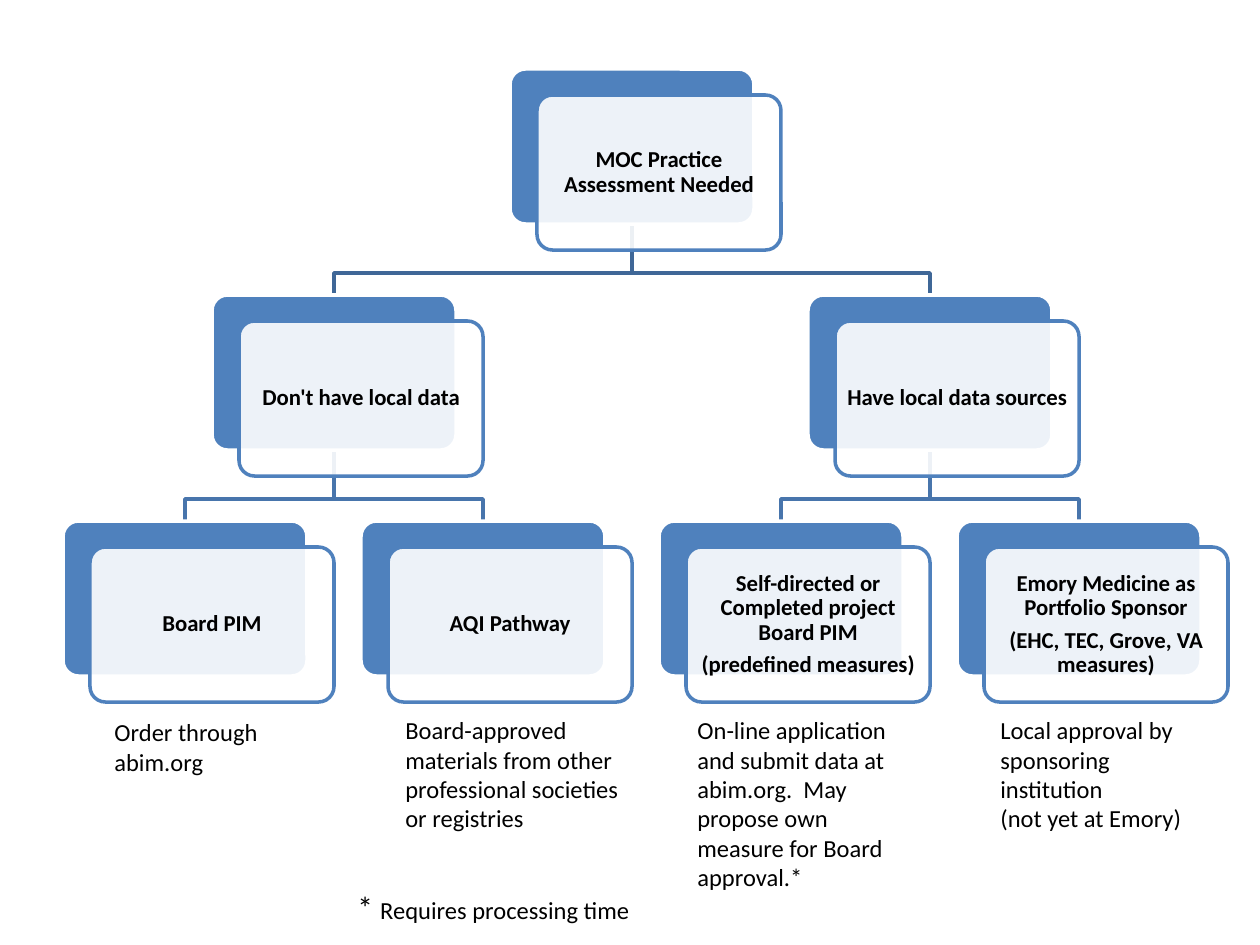
from lxml import etree
from pptx import Presentation, util as u
from pptx.dml.color import RGBColor
from pptx.enum import shapes, text
from pptx.oxml import ns

PX = 914400 / 126
BLUE = RGBColor(0x4F, 0x81, 0xBD)
DARK = RGBColor(0x3F, 0x67, 0x97)
MID = RGBColor(0x48, 0x75, 0xAC)
WHITE = RGBColor(0xFF, 0xFF, 0xFF)
BLACK = RGBColor(0, 0, 0)

WIDE, HIGH = 244, 155
LEFT, TOP = 63, 69
COL, ROW = 298, 226
DX, DY = 27, 26
BEND = 49

NODES = [
    (1.5, 0, ["MOC Practice Assessment Needed"]),
    (0.5, 1, ["Don't have local data"]),
    (0, 2, ["Board PIM"]),
    (1, 2, ["AQI Pathway"]),
    (2.5, 1, ["Have local data sources"]),
    (2, 2, ["Self-directed or Completed project Board PIM",
            "(predefined measures)"]),
    (3, 2, ["Emory Medicine as Portfolio Sponsor",
            "(EHC, TEC, Grove, VA measures)"]),
]
LINKS = [
    (2.5, 1, 3, MID), (2.5, 1, 2, MID), (1.5, 0, 2.5, DARK),
    (0.5, 1, 1, MID), (0.5, 1, 0, MID), (1.5, 0, 0.5, DARK),
]
NOTES = [
    (102, 711, 180, 126, ["Order through", "abim.org"]),
    (393, 709, 241, 154, ["Board-approved", "materials from other",
                          "professional societies", "or registries"]),
    (685, 709, 242, 180, ["On-line application", "and submit data at",
                          "abim.org.  May", "propose own",
                          "measure for Board", "approval.*"]),
    (988, 709, 242, 180, ["Local approval by", "sponsoring institution",
                          "(not yet at Emory)"]),
]

INSET = {"margin_" + side: u.Emu(round(6 * PX))
         for side in ("left", "right", "top", "bottom")}
FRAME = {"word_wrap": True, "vertical_anchor": text.MSO_ANCHOR.MIDDLE, **INSET}
PARA = {"alignment": text.PP_ALIGN.CENTER, "line_spacing": 0.9,
        "space_after": u.Pt(4.5)}
HEAD = {"name": "Calibri", "size": u.Pt(13), "bold": True}
BODY = {"name": "Calibri", "size": u.Pt(14)}


def px(*vals):
    return [u.Emu(round(val * PX)) for val in vals]


def put(item, vals):
    for key, val in vals.items():
        setattr(item, key, val)


def spot(col, row):
    return LEFT + col * COL, TOP + row * ROW


def write(frame, lines, form, font):
    for num, line in enumerate(lines):
        para = frame.paragraphs[0] if num == 0 else frame.add_paragraph()
        put(para, form)
        run = para.add_run()
        run.text = line
        put(run.font, font)
        run.font.color.rgb = BLACK


def plate(slide, x, y, fill, edge):
    shape = slide.shapes.add_shape(
        shapes.MSO_SHAPE.ROUNDED_RECTANGLE, *px(x, y, WIDE, HIGH))
    shape.adjustments[0] = 0.1
    shape.shadow.inherit = False
    shape.fill.solid()
    shape.fill.fore_color.rgb = fill
    shape.line.color.rgb = edge
    shape.line.width = u.Pt(2)
    return shape


def card(slide, x, y, lines):
    plate(slide, x, y, BLUE, WHITE)
    front = plate(slide, x + DX, y + DY, WHITE, BLUE)
    tint = front._element.spPr.find(ns.qn("a:solidFill"))[0]
    etree.SubElement(tint, ns.qn("a:alpha"), val="90000")
    put(front.text_frame, FRAME)
    write(front.text_frame, lines, PARA, HEAD)


def link(slide, col, row, kid, hue):
    x, y = spot(col, row)
    end, low = spot(kid, row + 1)
    x, y, end = x + WIDE // 2, y + HIGH, end + WIDE // 2
    pen = slide.shapes.build_freeform(x, y, scale=PX)
    pen.add_line_segments(
        [(x, y + BEND), (end, y + BEND), (end, low)], close=False)
    shape = pen.convert_to_shape()
    shape.shadow.inherit = False
    shape.fill.background()
    shape.line.color.rgb = hue
    shape.line.width = u.Pt(2)


def note(slide, x, y, wide, high, lines):
    frame = slide.shapes.add_textbox(*px(x, y, wide, high)).text_frame
    frame.word_wrap = False
    write(frame, lines, {}, BODY)
    return frame


def chart(slide):
    for args in LINKS:
        link(slide, *args)
    for col, row, lines in NODES:
        card(slide, *spot(col, row), lines)


def foot(slide, x, y, wide, high):
    frame = note(slide, x, y, wide, high, ["* "])
    para = frame.paragraphs[0]
    para.runs[0].font.size = u.Pt(18)
    run = para.add_run()
    run.text = "Requires processing time"
    put(run.font, BODY)
    run.font.color.rgb = BLACK


def main():
    deck = Presentation()
    deck.slide_width, deck.slide_height = px(1260, 945)
    slide = deck.slides.add_slide(deck.slide_layouts[6])
    chart(slide)
    for args in NOTES:
        note(slide, *args)
    foot(slide, 345, 882, 310, 50)
    deck.save("out.pptx")


if __name__ == "__main__":
    main()
